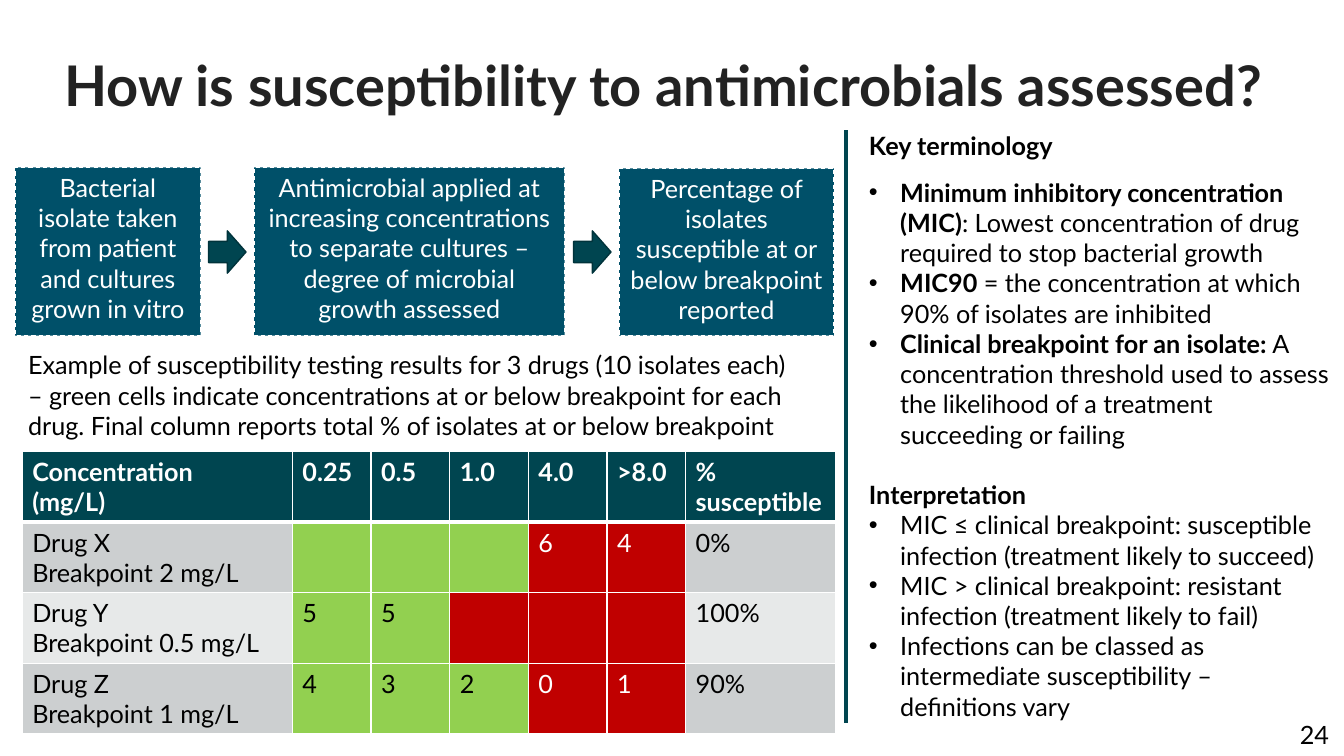
import pptx
import pptx.util
import pptx.dml.color
import pptx.enum.dml
import pptx.enum.shapes
import pptx.enum.text
import pptx.oxml
import pptx.oxml.ns
import lxml.etree

PX = 9144  # 100 px to the inch
FONT = "Lato"
BLACK, WHITE = "000000", "FFFFFF"
TEAL, BLUE = "004550", "005069"
GREEN, RED = "92D050", "C00000"
BANDS = ["CCCFD0", "E7E9E9"]
ALIGN = pptx.enum.text.PP_ALIGN
SHAPE = pptx.enum.shapes.MSO_SHAPE

STEPS = [
    (15, 166, 184, 167, "Bacterial isolate taken from patient and cultures grown in vitro"),
    (252, 166, 308, 167, "Antimicrobial applied at increasing concentrations to separate "
                         "cultures – degree of microbial growth assessed"),
    (614, 167, 213, 166, "Percentage of isolates susceptible at or below breakpoint reported"),
]
CAPTION = ("Example of susceptibility testing results for 3 drugs (10 isolates each) – green cells "
           "indicate concentrations at or below breakpoint for each drug. Final column reports "
           "total % of isolates at or below breakpoint")
# Heading, space above the heading, space below it, bullets as (bold part, plain part)
TERM_SECTIONS = [
    ("Key terminology", 0, 12, [
        ("Minimum inhibitory concentration (MIC)",
         ": Lowest concentration of drug required to stop bacterial growth"),
        ("MIC90", " = the concentration at which 90% of isolates are inhibited"),
        ("Clinical breakpoint for an isolate:",
         " A concentration threshold used to assess the likelihood of a treatment "
         "succeeding or failing"),
    ]),
    ("Interpretation", 21.6, 0, [
        ("", "MIC ≤ clinical breakpoint: susceptible infection (treatment likely to succeed)"),
        ("", "MIC > clinical breakpoint: resistant infection (treatment likely to fail)"),
        ("", "Infections can be classed as intermediate susceptibility – definitions vary"),
    ]),
]
HEADER = ["Concentration\n(mg/L)", "0.25", "0.5", "1.0", "4.0", ">8.0", "% susceptible"]
# Drug, breakpoint, number of green columns, isolates per concentration, % susceptible
DRUGS = [
    ("Drug X", "2", 3, ["", "", "", "6", "4"], "0%"),
    ("Drug Y", "0.5", 2, ["5", "5", "", "", ""], "100%"),
    ("Drug Z", "1", 3, ["4", "3", "2", "0", "1"], "90%"),
]
COLUMN_WIDTHS = [268] + [78] * 5 + [149]
ROW_HEIGHT = 70


def px(*lengths):
    return [pptx.util.Emu(length * PX) for length in lengths]


def color(hex_string):
    return pptx.dml.color.RGBColor.from_string(hex_string)


def paint(fill, hex_string):
    fill.solid()
    fill.fore_color.rgb = color(hex_string)


def add_run(paragraph, text, hex_string=BLACK, bold=False, size=18):
    run = paragraph.add_run()
    run.text = text
    run.font.name = FONT
    run.font.size = pptx.util.Pt(size)
    run.font.bold = bold
    run.font.color.rgb = color(hex_string)


def add_text_box(slide, left, top, width, height):
    frame = slide.shapes.add_textbox(*px(left, top, width, height)).text_frame
    frame.word_wrap = True
    return frame


def add_label(slide, box, text, hex_string=BLACK, bold=False, size=18, align=ALIGN.LEFT):
    paragraph = add_text_box(slide, *box).paragraphs[0]
    paragraph.alignment = align
    add_run(paragraph, text, hex_string, bold, size)
    return paragraph


def add_filled_shape(slide, kind, box, fill, line, line_width):
    shape = slide.shapes.add_shape(kind, *px(*box))
    shape.shadow.inherit = False
    paint(shape.fill, fill)
    shape.line.color.rgb = color(line)
    shape.line.width = pptx.util.Pt(line_width)
    return shape


def add_step(slide, left, top, width, height, text):
    shape = add_filled_shape(slide, SHAPE.RECTANGLE, (left, top, width, height), BLUE, WHITE, 0.75)
    shape.line.dash_style = pptx.enum.dml.MSO_LINE.DASH
    frame = shape.text_frame
    frame.word_wrap = True
    frame.vertical_anchor = pptx.enum.text.MSO_ANCHOR.TOP
    frame.paragraphs[0].alignment = ALIGN.CENTER
    add_run(frame.paragraphs[0], text, WHITE)


def add_divider(slide, x, top, bottom):
    line = slide.shapes.add_connector(
        pptx.enum.shapes.MSO_CONNECTOR.STRAIGHT, *px(x, top, x, bottom))
    line.line.color.rgb = color(TEAL)
    line.line.width = pptx.util.Pt(3)
    lxml.etree.SubElement(line._element.spPr, pptx.oxml.ns.qn("a:effectLst"))


def set_bullet(paragraph, indent):
    properties = paragraph._p.get_or_add_pPr()
    properties.set("marL", str(indent * PX))
    properties.set("indent", str(-indent * PX))
    for tag, name, value in [("a:buFont", "typeface", "Arial"), ("a:buChar", "char", "•")]:
        lxml.etree.SubElement(properties, pptx.oxml.ns.qn(tag)).set(name, value)


def add_terms(slide, box):
    frame = add_text_box(slide, *box)
    paragraph = frame.paragraphs[0]
    for index, (heading, before, after, bullets) in enumerate(TERM_SECTIONS):
        if index:
            paragraph = frame.add_paragraph()
        paragraph.space_before = pptx.util.Pt(before)
        paragraph.space_after = pptx.util.Pt(after)
        add_run(paragraph, heading, bold=True)
        for term, meaning in bullets:
            bullet = frame.add_paragraph()
            set_bullet(bullet, 31)
            if term:
                add_run(bullet, term, bold=True)
            add_run(bullet, meaning)


def set_borders(cell, top, bottom):
    properties = cell._tc.get_or_add_tcPr()
    for side, points in [("L", 1), ("R", 1), ("T", top), ("B", bottom)]:
        properties.append(pptx.oxml.parse_xml(
            f'<a:ln{side} {pptx.oxml.ns.nsdecls("a")} w="{points * 12700}">'
            f'<a:solidFill><a:srgbClr val="{WHITE}"/></a:solidFill></a:ln{side}>'))


def fill_cell(cell, row, text, fill, hex_string):
    set_borders(cell, top=3 if row == 1 else 1, bottom=3 if row == 0 else 1)
    paint(cell.fill, fill)
    frame = cell.text_frame
    for index, line in enumerate(text.split("\n")):
        paragraph = frame.add_paragraph() if index else frame.paragraphs[0]
        paragraph.font.size = pptx.util.Pt(18)
        if line:
            add_run(paragraph, line, hex_string, bold=row == 0)


def add_results(slide, left, top):
    rows = len(DRUGS) + 1
    table = slide.shapes.add_table(
        rows, len(HEADER), *px(left, top, sum(COLUMN_WIDTHS), rows * ROW_HEIGHT)).table
    for column, width in zip(table.columns, px(*COLUMN_WIDTHS)):
        column.width = width
    for column, text in enumerate(HEADER):
        fill_cell(table.cell(0, column), 0, text, TEAL, WHITE)
    for row, (drug, breakpoint_value, greens, counts, total) in enumerate(DRUGS, 1):
        band = BANDS[(row - 1) % 2]
        label = f"{drug}\nBreakpoint {breakpoint_value} mg/L"
        fill_cell(table.cell(row, 0), row, label, band, BLACK)
        for column, count in enumerate(counts, 1):
            fill, ink = (GREEN, BLACK) if column <= greens else (RED, WHITE)
            fill_cell(table.cell(row, column), row, count, fill, ink)
        fill_cell(table.cell(row, len(HEADER) - 1), row, total, band, BLACK)


def main():
    presentation = pptx.Presentation()
    presentation.slide_width, presentation.slide_height = px(1333, 750)
    slide = presentation.slides.add_slide(presentation.slide_layouts[6])

    # Page number and title
    add_label(slide, (1144, 709, 184, 40), "24", align=ALIGN.RIGHT)
    title = add_label(slide, (54, 53, 1279, 140),
                      "How is susceptibility to antimicrobials assessed?", "222222", True, 40)
    title.line_spacing = 0.9

    # Testing steps
    for step in STEPS:
        add_step(slide, *step)
    for left in (207, 569):
        add_filled_shape(slide, SHAPE.RIGHT_ARROW, (left, 229, 37, 42), TEAL, "00333B", 1)

    # Terminology column
    add_divider(slide, 839, 129, 717)
    add_terms(slide, (852, 124, 481, 633))

    # Example results
    add_results(slide, 22, 448)
    add_label(slide, (18, 342, 786, 101), CAPTION)

    presentation.save("out.pptx")


if __name__ == "__main__":
    main()
